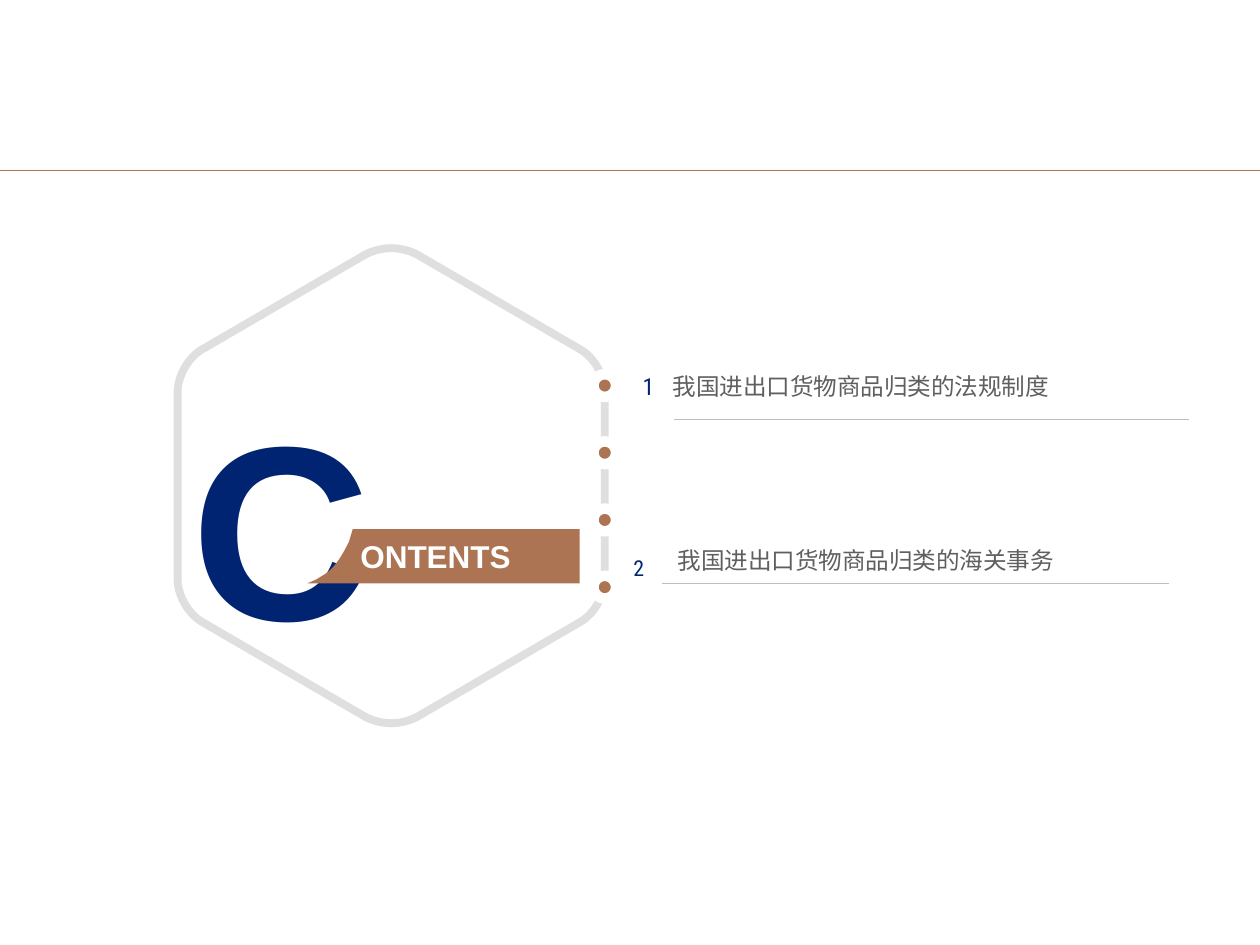
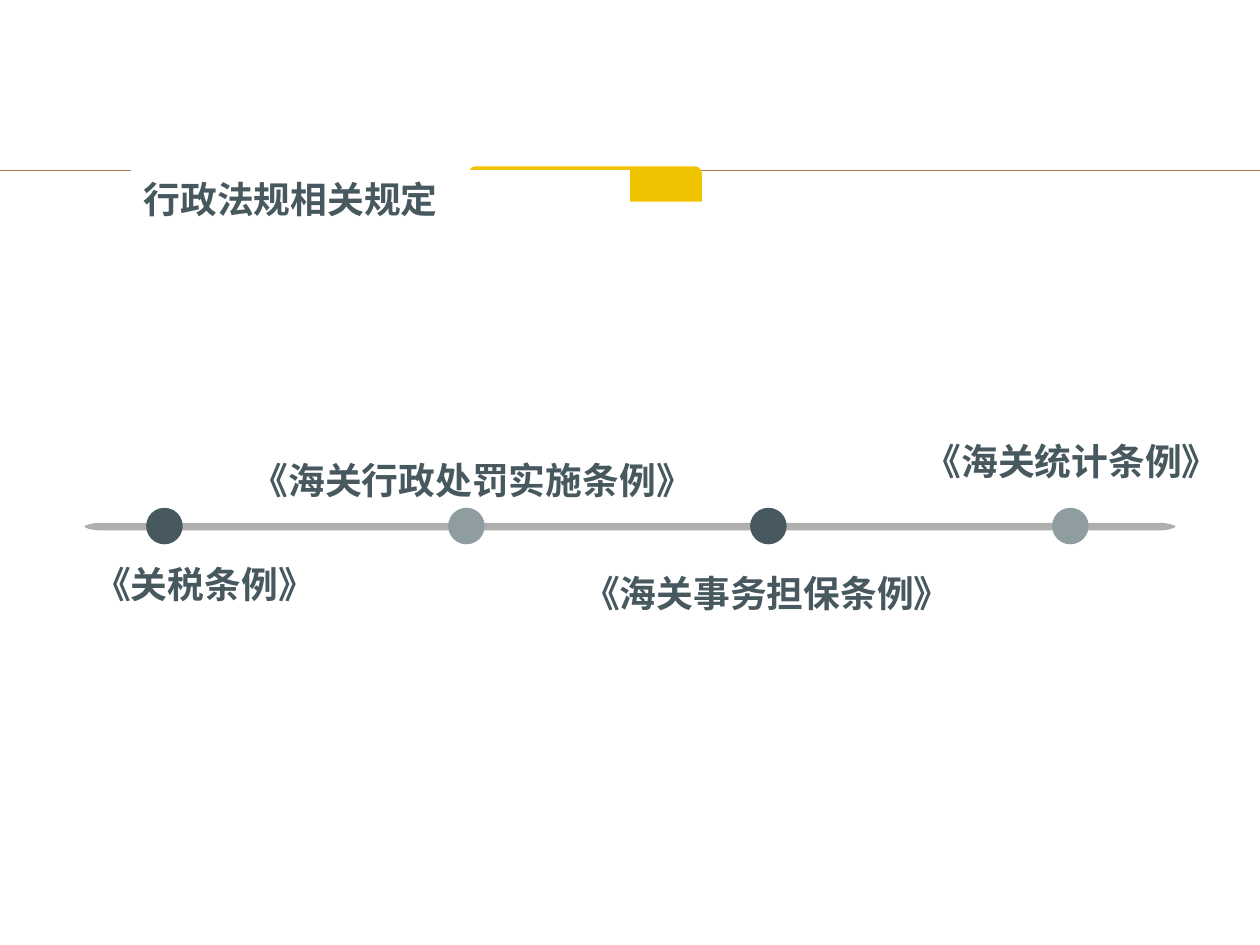
from typing import NamedTuple

from lxml import etree
from pptx import Presentation
from pptx import util as u
from pptx.dml import color
from pptx.enum import shapes, text
from pptx.oxml import ns

COLORS = {
    "copper": "AC7452",
    "navy": "002472",
    "silver": "DFDFDF",
    "rule": "BFBFBF",
    "gray": "5F5F5F",
    "bar": "AFAFAF",
    "slate": "47585F",
    "mist": "8F9CA0",
    "yellow": "F0C301",
    "white": "FFFFFF",
}
CJK_FONT = "Noto Sans CJK SC"
TITLE_ONLY, BLANK = 5, 6

Point = tuple[float, float]
Stroke = tuple[Point, ...]


class Area(NamedTuple):
    left: float
    top: float
    width: float
    height: float


class Style(NamedTuple):
    size: float
    color: str
    font: str = "Arial"
    bold: bool = False
    align: text.PP_ALIGN = text.PP_ALIGN.LEFT
    anchor: text.MSO_ANCHOR = text.MSO_ANCHOR.TOP


class Insets(NamedTuple):
    left: float = 0.07
    top: float = 0.04
    right: float = 0.07
    bottom: float = 0.04


class Entry(NamedTuple):
    number: str
    number_area: Area
    number_size: float
    number_inset: float
    topic: str
    topic_area: Area
    rule: tuple[Point, Point]


class Regulation(NamedTuple):
    name: str
    area: Area
    dot_color: str


DEFAULT_INSETS = Insets(0.1, 0.05, 0.1, 0.05)
CENTER = text.PP_ALIGN.CENTER
MIDDLE = text.MSO_ANCHOR.MIDDLE
TOPIC = Style(13.5, "gray")
REGULATION = Style(21, "slate", "Arial Narrow", True)
TITLE = Style(21, "slate", CJK_FONT, True)

ENTRIES = [
    Entry("1", Area(5.03, 2.91, 0.22, 0.3), 13.5, 0.04,
          "我国进出口货物商品归类的法规制度", Area(5.27, 2.91, 4.18, 0.33),
          ((5.35, 3.33), (9.44, 3.33))),
    Entry("2", Area(4.88, 4.15, 0.38, 0.47), 12.5, 0.25,
          "我国进出口货物商品归类的海关事务", Area(5.31, 4.29, 4.05, 0.65),
          ((5.25, 4.63), (9.28, 4.63))),
]
REGULATIONS = [
    Regulation("《关税条例》", Area(0.65, 4.41, 1.96, 0.45), "slate"),
    Regulation("《海关行政处罚实施条例》", Area(1.9, 3.58, 3.84, 0.45), "mist"),
    Regulation("《海关事务担保条例》", Area(4.53, 4.48, 3.13, 0.45), "slate"),
    Regulation("《海关统计条例》", Area(7.24, 3.43, 2.54, 0.45), "mist"),
]


def rgb(name: str) -> color.RGBColor:
    return color.RGBColor.from_string(COLORS[name])


def paint(shape, fill: str | None = None, line: str | None = None, width: float = 0) -> None:
    shape.shadow.inherit = False
    if fill:
        shape.fill.solid()
        shape.fill.fore_color.rgb = rgb(fill)
    else:
        shape.fill.background()
    if line:
        shape.line.color.rgb = rgb(line)
        shape.line.width = u.Pt(width)
    else:
        shape.line.fill.background()


def write(shape, words: str, style: Style, insets: Insets = Insets()) -> None:
    frame = shape.text_frame
    frame.text = words
    frame.word_wrap = True
    frame.auto_size = text.MSO_AUTO_SIZE.NONE
    frame.vertical_anchor = style.anchor
    frame.margin_left, frame.margin_top, frame.margin_right, frame.margin_bottom = map(u.Inches, insets)
    para = frame.paragraphs[0]
    para.alignment = style.align
    span = para.runs[0]
    span.font.size = u.Pt(style.size)
    span.font.bold = style.bold
    span.font.name = style.font
    span.font.color.rgb = rgb(style.color)
    east_asian = etree.SubElement(span.font._element, ns.qn("a:ea"))
    east_asian.set("typeface", CJK_FONT)


def add_text(page, area: Area, words: str, style: Style, insets: Insets = Insets()) -> None:
    box = page.shapes.add_textbox(*map(u.Inches, area))
    write(box, words, style, insets)


def add_preset(page, kind: shapes.MSO_SHAPE, area: Area, fill: str,
               line: str | None = None, width: float = 0):
    shape = page.shapes.add_shape(kind, *map(u.Inches, area))
    paint(shape, fill, line, width)
    return shape


def add_line(page, start: Point, end: Point, line: str, width: float):
    connector = page.shapes.add_connector(
        shapes.MSO_CONNECTOR.STRAIGHT, *map(u.Inches, start + end))
    connector.line.color.rgb = rgb(line)
    connector.line.width = u.Pt(width)
    etree.SubElement(connector.element.spPr, ns.qn("a:effectLst"))
    return connector


def mirror_quarter(quarter: list[Stroke], center: Point) -> list[Stroke]:
    cx, cy = center
    lower = [tuple((x, round(2 * cy - y, 3)) for x, y in reversed(stroke))
             for stroke in reversed(quarter)]
    right = quarter + lower
    left = [tuple((round(2 * cx - x, 3), y) for x, y in reversed(stroke))
            for stroke in reversed(right)]
    return right + left


def bend(segment, handles: Stroke, left: int, top: int) -> None:
    segment.tag = ns.qn("a:cubicBezTo")
    for index, (x, y) in enumerate(handles):
        handle = etree.Element(ns.qn("a:pt"))
        handle.set("x", str(u.Inches(x) - left))
        handle.set("y", str(u.Inches(y) - top))
        segment.insert(index, handle)


def add_outline(page, strokes: list[Stroke], fill: str | None = None,
                line: str | None = None, width: float = 0):
    knots = [strokes[0][0]]
    curves = {}
    for stroke in strokes:
        if stroke[0] != knots[-1]:
            knots.append(stroke[0])
        if len(stroke) == 4:
            curves[len(knots)] = stroke[1:3]
            knots.append(stroke[3])
    corners = [(u.Inches(x), u.Inches(y)) for x, y in knots]
    builder = page.shapes.build_freeform(*corners[0])
    builder.add_line_segments(corners[1:], close=False)
    shape = builder.convert_to_shape()
    outline = next(shape.element.iter(ns.qn("a:path")))
    segments = list(outline)
    for index, handles in curves.items():
        bend(segments[index], handles, shape.left, shape.top)
    etree.SubElement(outline, ns.qn("a:close"))
    paint(shape, fill, line, width)
    return shape


def add_master_rule(deck, page) -> None:
    rule = add_line(page, (0, 1.35), (10, 1.35), "copper", 0.5)
    deck.slide_master.element.cSld.spTree.append(rule.element)


def draw_contents(page) -> None:
    center = ((1.41 + 4.8) / 2, (1.97 + 5.74) / 2)
    quarter = [((center[0], 1.97), (3.18, 1.97), (3.25, 1.99), (3.31, 2.02)),
               ((4.6, 2.77), (4.71, 2.83), (4.8, 2.98), (4.8, 3.11))]
    add_outline(page, mirror_quarter(quarter, center), line="silver", width=4.5)

    add_text(page, Area(1.45, 3.09, 1.45, 2.09), "C",
             Style(141.9, "navy", bold=True, align=CENTER, anchor=MIDDLE))
    ribbon_outline = [((2.8, 4.2),), ((4.6, 4.2),), ((4.6, 4.63),), ((2.44, 4.63),),
                      ((2.51, 4.6), (2.54, 4.58), (2.56, 4.57), (2.59, 4.55)),
                      ((2.59, 4.55), (2.67, 4.49), (2.72, 4.4), (2.77, 4.3))]
    ribbon = add_outline(page, ribbon_outline, fill="copper")
    write(ribbon, "ONTENTS", Style(18, "white", bold=True, anchor=MIDDLE), Insets(left=0.42))

    for index in range(4):
        add_preset(page, shapes.MSO_SHAPE.OVAL, Area(4.71, 2.97 + 1.6 * index / 3, 0.18, 0.18),
                   "copper", "white", 6)

    for entry in ENTRIES:
        number = add_preset(page, shapes.MSO_SHAPE.RECTANGLE, entry.number_area, "white")
        write(number, entry.number,
              Style(entry.number_size, "navy", "Roboto Condensed", align=CENTER),
              Insets(top=entry.number_inset))
        add_text(page, entry.topic_area, entry.topic, TOPIC)
        add_line(page, *entry.rule, "rule", 0.25)


def draw_regulations(page) -> None:
    quarter = [((9.2, 4.15), (9.27, 4.15), (9.33, 4.17), (9.33, 4.18))]
    add_outline(page, mirror_quarter(quarter, (5, 4.18)), fill="bar")

    for index, regulation in enumerate(REGULATIONS):
        add_text(page, regulation.area, regulation.name, REGULATION, DEFAULT_INSETS)
        add_preset(page, shapes.MSO_SHAPE.OVAL, Area(1.16 + 7.19 * index / 3, 4.03, 0.29, 0.29),
                   regulation.dot_color)

    tab = add_preset(page, shapes.MSO_SHAPE.ROUND_2_SAME_RECTANGLE,
                     Area(3.72, 1.32, 1.85, 0.28), "yellow")
    tab.adjustments[0] = 0.19

    title = page.shapes.title
    title.left, title.top, title.width, title.height = map(u.Inches, Area(1.04, 1.35, 3.96, 0.45))
    title.fill.solid()
    title.fill.fore_color.rgb = rgb("white")
    write(title, "行政法规相关规定", TITLE, DEFAULT_INSETS)
    tab.element.addnext(title.element)


def main() -> None:
    deck = Presentation()
    deck.slide_width, deck.slide_height = u.Inches(10), u.Inches(7.5)
    contents = deck.slides.add_slide(deck.slide_layouts[BLANK])
    add_master_rule(deck, contents)
    draw_contents(contents)
    draw_regulations(deck.slides.add_slide(deck.slide_layouts[TITLE_ONLY]))
    deck.save("out.pptx")


if __name__ == "__main__":
    main()
